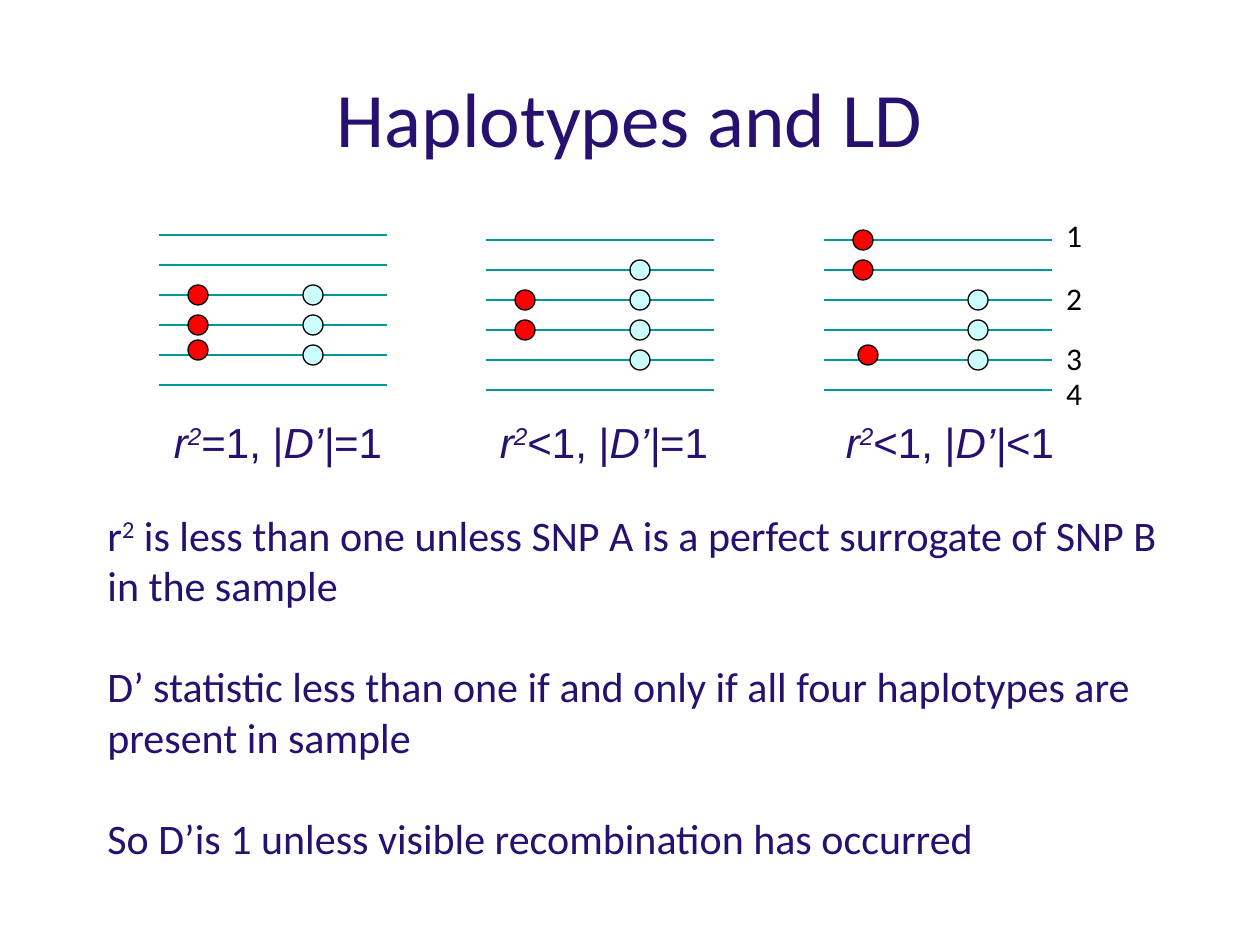
from pptx import Presentation
from pptx import util as u
from pptx.dml.color import RGBColor
from pptx.enum import shapes, text
from lxml import etree

PX = 914400 / 126
NAVY = RGBColor(0x26, 0x11, 0x70)
TEAL = RGBColor(0x00, 0x99, 0x99)
RED = RGBColor(0xFF, 0x00, 0x00)
CYAN = RGBColor(0xCC, 0xFF, 0xFF)
BLACK = RGBColor(0x00, 0x00, 0x00)
CENTER = text.PP_ALIGN.CENTER
LEFT = text.PP_ALIGN.LEFT


def px(*lengths):
    return [u.Emu(round(length * PX)) for length in lengths]


def add_text(box, paragraphs, size, font="Calibri", color=NAVY, align=CENTER):
    """Each paragraph is a list of (words, style); style may hold i (italic) and ^ (superscript)."""
    frame = slide.shapes.add_textbox(*px(*box)).text_frame
    frame.word_wrap = True
    for index, runs in enumerate(paragraphs):
        paragraph = frame.add_paragraph() if index else frame.paragraphs[0]
        paragraph.alignment = align
        paragraph.font.name = font
        paragraph.font.size = u.Pt(size)
        paragraph.font.color.rgb = color
        for words, style in runs:
            run = paragraph.add_run()
            run.text = words
            if "i" in style:
                run.font.italic = True
            if "^" in style:
                run._r.get_or_add_rPr().set("baseline", "30000")
    return frame


prs = Presentation()
prs.slide_width, prs.slide_height = px(1260, 945)
slide = prs.slides.add_slide(prs.slide_layouts[6])

# Title
title = add_text((63, 38, 1134, 157), [[("Haplotypes and LD", "")]], 44)
title.vertical_anchor = text.MSO_ANCHOR.MIDDLE

# Haplotype panels: left, top, SNP A and SNP B as (row, nudge), caption left, r² and D’ relations
ROWS, ROW_GAP, LINE_WIDTH, DOT = 6, 30, 228, 20
SNP_A_X, SNP_B_X = 39, 154
panels = [
    (159, 235, [(2, 0), (3, 0), (4, -5)], [2, 3, 4], 147, "=", "="),
    (486, 240, [(2, 0), (3, 0)], [1, 2, 3, 4], 473, "<", "="),
    (824, 240, [(0, 0), (1, 0), (4, -5)], [2, 3, 4], 819, "<", "<"),
]
for left, top, snp_a, snp_b, caption_left, r2_sign, d_sign in panels:
    # Chromosomes
    for row in range(ROWS):
        y = top + row * ROW_GAP
        chromosome = slide.shapes.add_connector(
            shapes.MSO_CONNECTOR.STRAIGHT, *px(left, y, left + LINE_WIDTH, y))
        chromosome.line.color.rgb = TEAL
        chromosome.line.width = u.Pt(1.5)
        sp_pr = chromosome._element.spPr
        etree.SubElement(sp_pr, sp_pr.prstGeom.tag.replace("prstGeom", "effectLst"))

    # Alleles; a nudged one sits up and to the right of its place
    alleles = [(SNP_A_X - nudge, row, nudge, RED) for row, nudge in snp_a]
    alleles += [(SNP_B_X, row, 0, CYAN) for row in snp_b]
    for x, row, nudge, color in alleles:
        if left == 159 and nudge:
            x = SNP_A_X
        y = top + row * ROW_GAP + nudge
        allele = slide.shapes.add_shape(
            shapes.MSO_SHAPE.OVAL, *px(left + x - DOT / 2, y - DOT / 2, DOT, DOT))
        allele.shadow.inherit = False
        allele.fill.solid()
        allele.fill.fore_color.rgb = color
        allele.line.color.rgb = BLACK
        allele.line.width = u.Pt(0.75)

    # Caption
    caption = [("r", "i"), ("2", "i^"), (f"{r2_sign}1, |", ""), ("D’|", "i"), (f"{d_sign}1", "")]
    add_text((caption_left, 410, 262, 63), [caption], 24, "Arial")

# Haplotype numbers
for number, top in enumerate((210, 273, 333, 368), start=1):
    add_text((1007, top, 134, 50), [[(str(number), "")]], 18, color=BLACK)

# Explanation
explanation = add_text((95, 503, 1076, 369), [
    [("r", ""), ("2", "^"),
     (" is less than one unless SNP A is a perfect surrogate of SNP B in the sample", "")],
    [("D’ statistic less than one if and only if all four haplotypes are present in sample", "")],
    [("So D’is 1 unless visible recombination has occurred", "")],
], 24, align=LEFT)
for paragraph in explanation.paragraphs[1:]:
    paragraph.space_before = u.Pt(29)

prs.save("out.pptx")
